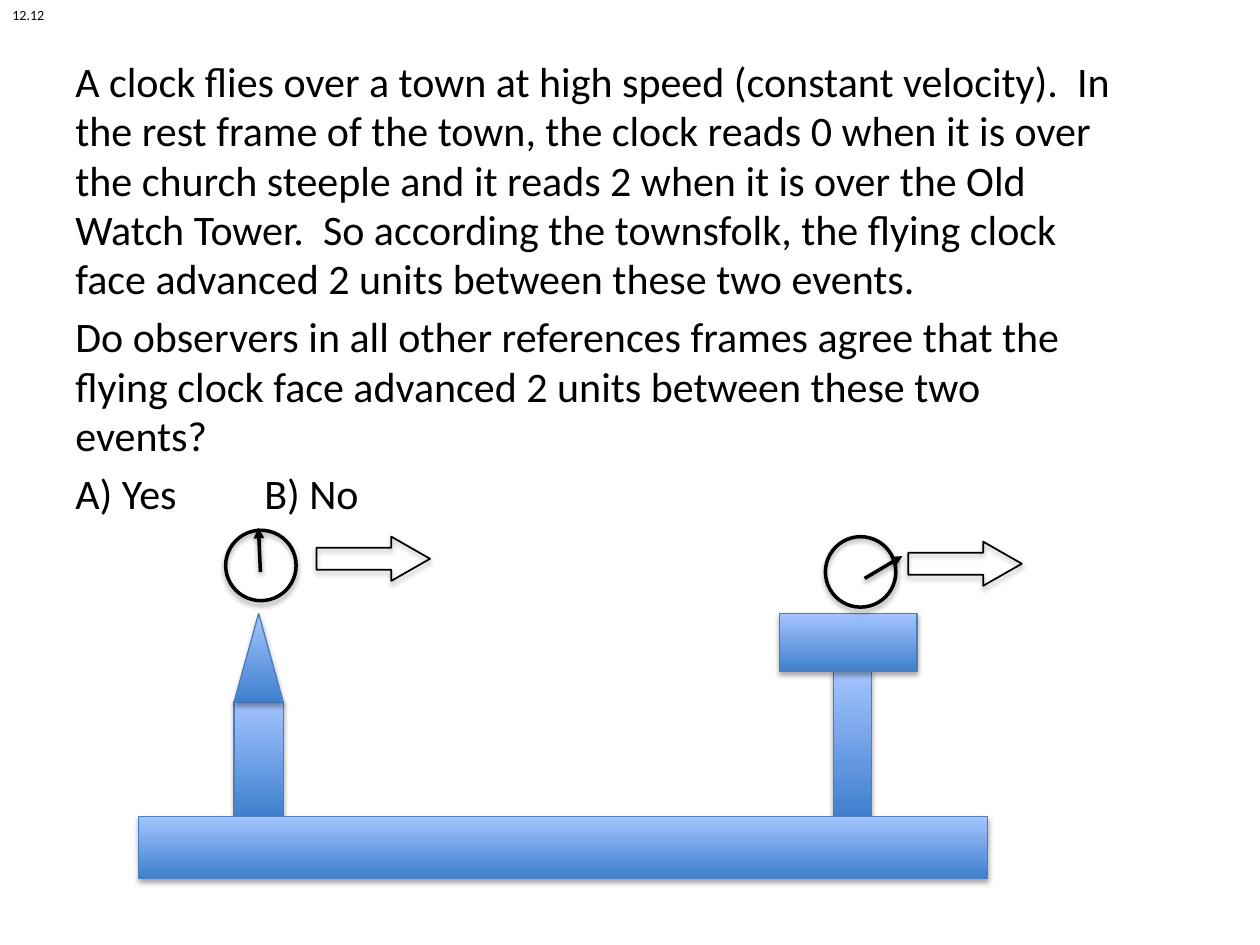
from lxml.etree import SubElement
from pptx import Presentation
from pptx.dml.color import RGBColor
from pptx.enum.shapes import MSO_CONNECTOR, MSO_SHAPE
from pptx.enum.text import MSO_ANCHOR, MSO_AUTO_SIZE
from pptx.oxml.ns import qn
from pptx.util import Cm, Pt

COLORS = {
    "ink": "000000",
    "stone_dark": "3F80CE",
    "stone_light": "A4C4FF",
    "stone_edge": "4B7EBC",
}
QUESTION = [
    "A clock flies over a town at high speed (constant velocity).  In the rest frame of the town, "
    "the clock reads 0 when it is over the church steeple and it reads 2 when it is over the Old "
    "Watch Tower.  So according the townsfolk, the flying clock face advanced 2 units between "
    "these two events.",
    "Do observers in all other references frames agree that the flying clock face advanced 2 units "
    "between these two events?",
    "A) Yes\t\tB) No",
]
ANSWER_TABS = (3.02, 3.81)
QUESTION_FRAME = {"word_wrap": True, "vertical_anchor": MSO_ANCHOR.TOP}
QUESTION_PARAGRAPH = {"space_before": Pt(4.8), "line_spacing": 0.98}
NUMBER_FRAME = {"word_wrap": False, "auto_size": MSO_AUTO_SIZE.SHAPE_TO_FIT_TEXT}


def color(name):
    return RGBColor.from_string(COLORS[name])


def set_format(target, values):
    for attribute, value in values.items():
        setattr(target, attribute, value)


def add_shadow(part, opacity, distance):
    effects = SubElement(part._element.spPr, qn("a:effectLst"))
    shadow = SubElement(effects, qn("a:outerShdw"), blurRad=str(Pt(3.1)),
                        dist=str(Pt(distance)), dir="5400000", rotWithShape="0")
    black = SubElement(shadow, qn("a:srgbClr"), val=COLORS["ink"])
    SubElement(black, qn("a:alpha"), val=str(opacity * 1000))


def draw_line(part, ink, width):
    part.line.color.rgb = color(ink)
    part.line.width = Pt(width)


def add_stone(slide, preset, left, top, width, height):
    stone = slide.shapes.add_shape(preset, Cm(left), Cm(top), Cm(width), Cm(height))
    stone.fill.gradient()
    stone.fill.gradient_angle = 90
    for stop, shade in zip(stone.fill.gradient_stops, ("stone_dark", "stone_light")):
        stop.color.rgb = color(shade)
    draw_line(stone, "stone_edge", 0.75)
    add_shadow(stone, 35, 1.8)


def add_outline(slide, preset, left, top, width, height, weight):
    outline = slide.shapes.add_shape(preset, Cm(left), Cm(top), Cm(width), Cm(height))
    outline.fill.background()
    draw_line(outline, "ink", weight)
    add_shadow(outline, 35, 1.8)
    return outline


def add_text(slide, box, paragraphs, size, frame_format, paragraph_format):
    frame = slide.shapes.add_textbox(*map(Cm, box)).text_frame
    set_format(frame, frame_format)
    frame.text = "\n".join(paragraphs)
    for paragraph in frame.paragraphs:
        set_format(paragraph, paragraph_format)
        set_format(paragraph.font, {"name": "Calibri", "size": Pt(size)})
        paragraph.font.color.rgb = color("ink")
    return frame


def add_question(slide, box):
    frame = add_text(slide, box, QUESTION, 24, QUESTION_FRAME, QUESTION_PARAGRAPH)
    answers = frame.paragraphs[-1]._p.get_or_add_pPr()
    tabs = SubElement(answers, qn("a:tabLst"))
    answers.remove(tabs)
    answers.insert(list(answers).index(answers.find(qn("a:defRPr"))), tabs)
    for position in ANSWER_TABS:
        SubElement(tabs, qn("a:tab"), pos=str(Cm(position)), algn="l")


def add_church(slide, left, top, width, height):
    steeple = 1.78
    add_stone(slide, MSO_SHAPE.RECTANGLE, left, top + steeple, width, height - steeple)
    add_stone(slide, MSO_SHAPE.ISOSCELES_TRIANGLE, left, top, width, steeple)


def add_watch_tower(slide, left, top, width, height):
    room, shaft = 1.16, 0.77
    add_stone(slide, MSO_SHAPE.RECTANGLE, left + 1.08, top + room, shaft, height - room)
    add_stone(slide, MSO_SHAPE.RECTANGLE, left, top, width, room)


def add_clock(slide, left, top, size, hand):
    add_outline(slide, MSO_SHAPE.OVAL, left, top, size, size, 2)
    pivot_x, pivot_y, tip_x, tip_y = hand
    pointer = slide.shapes.add_connector(
        MSO_CONNECTOR.STRAIGHT, Cm(left + pivot_x), Cm(top + pivot_y),
        Cm(left + tip_x), Cm(top + tip_y))
    draw_line(pointer, "ink", 2)
    SubElement(pointer._element.spPr.find(qn("a:ln")), qn("a:tailEnd"), type="triangle")
    add_shadow(pointer, 38, 1.6)


def add_motion_arrow(slide, left, top, width, height):
    arrow = add_outline(slide, MSO_SHAPE.RIGHT_ARROW, left, top, width, height, 1)
    arrow.adjustments[1] = 0.876


def add_town(slide, left, top, width, height):
    ground = 1.24
    walls = height - ground
    add_church(slide, left + 1.93, top, 0.99, walls)
    add_watch_tower(slide, left + 12.93, top, 2.77, walls)
    add_stone(slide, MSO_SHAPE.RECTANGLE, left, top + walls, width, ground)


def main():
    deck = Presentation()
    set_format(deck, {"slide_width": Cm(25.4), "slide_height": Cm(19.05)})
    slide = deck.slides.add_slide(deck.slide_layouts[6])
    add_question(slide, (1.27, 1.04, 21.49, 9.5))
    add_town(slide, 2.79, 12.37, 17.12, 5.33)
    add_clock(slide, 4.55, 10.69, 1.42, (0.7, 0.84, 0.66, -0.05))
    add_clock(slide, 16.64, 10.82, 1.42, (0.79, 0.84, 1.55, 0.39))
    add_motion_arrow(slide, 6.38, 10.82, 2.29, 0.89)
    add_motion_arrow(slide, 18.31, 10.92, 2.29, 0.89)
    add_text(slide, (0, 0, 1.17, 0.61), ["12.12"], 8, NUMBER_FRAME, {})
    deck.save("out.pptx")


if __name__ == "__main__":
    main()
